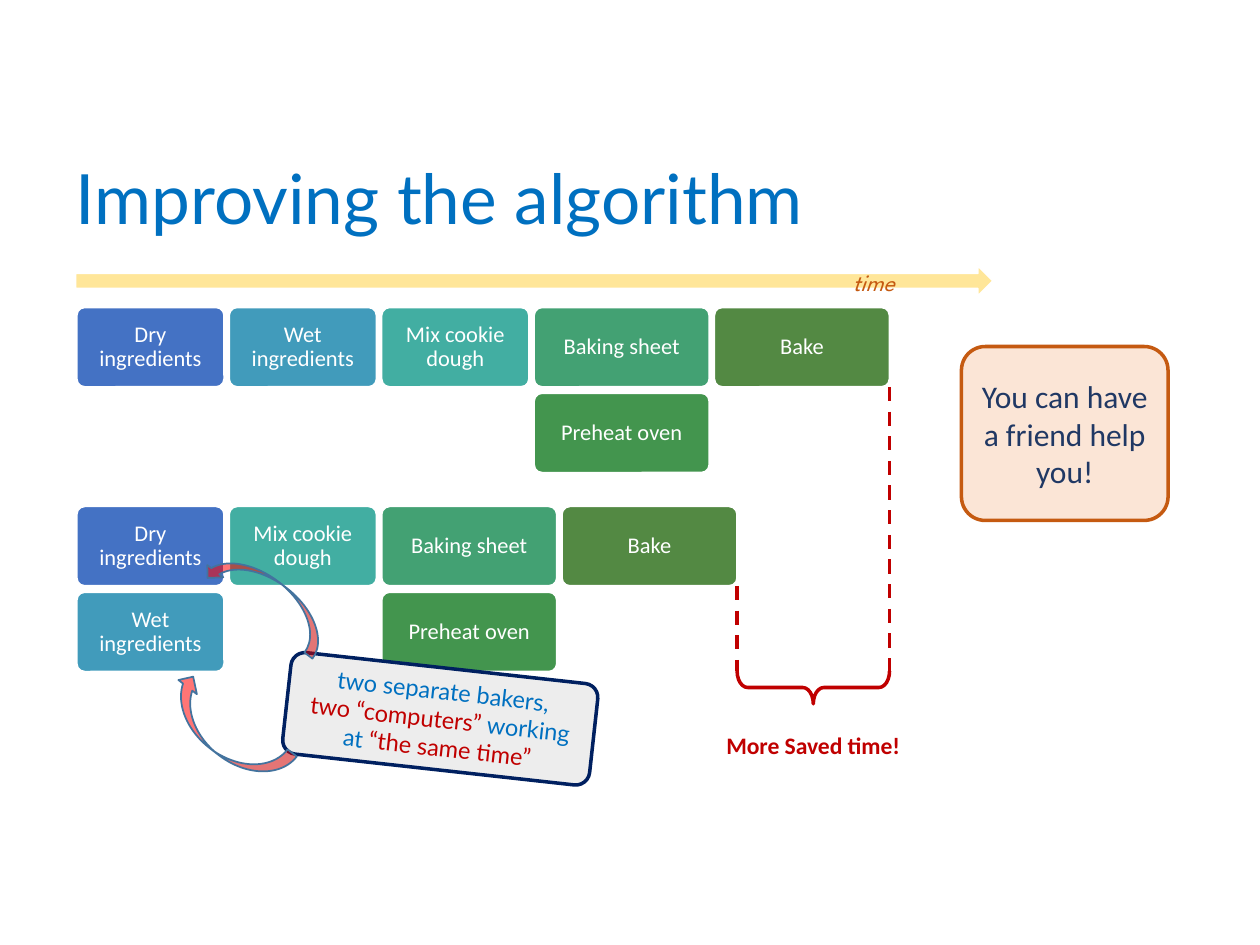
from dataclasses import dataclass

from lxml.etree import SubElement
from pptx import Presentation
from pptx.dml.color import RGBColor
from pptx.enum.dml import MSO_LINE
from pptx.enum.shapes import MSO_CONNECTOR, MSO_SHAPE
from pptx.enum.text import MSO_ANCHOR, MSO_AUTO_SIZE, PP_ALIGN
from pptx.oxml.ns import qn
from pptx.util import Pt


@dataclass(frozen=True)
class Theme:
    body_font: str = "Calibri"
    title_font: str = "Lato"
    time_font: str = "League Spartan"
    title_size: float = 39.6
    note_size: float = 18
    label_size: float = 13.5
    step_size: float = 12.8
    white: str = "FFFFFF"
    blue: str = "0070C0"
    navy: str = "002060"
    ink: str = "203864"
    red: str = "C00000"
    orange: str = "C55A11"
    peach: str = "FBE5D6"
    grey: str = "EDEDED"
    yellow: str = "FFE699"
    swoosh: str = "FF0000"
    swoosh_line: str = "43739E"


THEME = Theme()

TITLE = "Improving the algorithm"
STEP_COLOURS = {
    "Dry ingredients": "4472C4",
    "Wet ingredients": "419BBB",
    "Mix cookie dough": "42AEA2",
    "Baking sheet": "43A173",
    "Preheat oven": "43954E",
    "Bake": "538943",
}
NARROW, WIDE = 84.2, 100.1
# Each column: its width and the steps done in parallel, top to bottom.
ONE_BAKER = [
    (NARROW, ["Dry ingredients"]),
    (NARROW, ["Wet ingredients"]),
    (NARROW, ["Mix cookie dough"]),
    (WIDE, ["Baking sheet", "Preheat oven"]),
    (WIDE, ["Bake"]),
]
TWO_BAKERS = [
    (NARROW, ["Dry ingredients", "Wet ingredients"]),
    (NARROW, ["Mix cookie dough"]),
    (WIDE, ["Baking sheet", "Preheat oven"]),
    (WIDE, ["Bake"]),
]
BAKERS_NOTE = [
    [("two separate bakers,", THEME.blue)],
    [("two “computers” ", THEME.red), ("working at ", THEME.blue),
     ("“the same time”", THEME.red)],
]
# Box, and whether the arrow is mirrored.
SWOOSHES = [((115.9, 377.3, 26.6, 81.4), False), ((141.8, 301.7, 23, 81.4), True)]

FLOW_LEFT, STEP_GAP = 43.9, 2.9
STEP_HEIGHT, STEP_PITCH = 45.4, 49
ONE_TOP, TWO_TOP = 175.7, 289.4
BRACE_TOP, BRACE_DEPTH = 383.5, 18.7


def colour(value):
    return RGBColor.from_string(value)


def write(shape, paragraphs, size, font, align=PP_ALIGN.CENTER, spacing=None,
          bold=None, italic=None):
    """Fill a shape with paragraphs, each a list of (text, colour) runs."""
    frame = shape.text_frame
    frame.word_wrap = True
    for index, spans in enumerate(paragraphs):
        para = frame.add_paragraph() if index else frame.paragraphs[0]
        para.alignment = align
        para.line_spacing = spacing
        for text, ink in spans:
            span = para.add_run()
            span.text = text
            span.font.size = Pt(size)
            span.font.name = font
            span.font.bold = bold
            span.font.italic = italic
            span.font.color.rgb = colour(ink)
    return frame


def add_figure(shapes, kind, box, fill, line, width, adjust=(), turn=0):
    shape = shapes.add_shape(kind, *map(Pt, box))
    shape.shadow.inherit = False
    for index, value in enumerate(adjust):
        shape.adjustments[index] = value
    shape.rotation = turn
    if fill:
        shape.fill.solid()
        shape.fill.fore_color.rgb = colour(fill)
    else:
        shape.fill.background()
    shape.line.color.rgb = colour(line)
    shape.line.width = Pt(width)
    return shape


def add_label(shapes, box, text, ink, font, **style):
    label = shapes.add_textbox(*map(Pt, box))
    frame = write(label, [[(text, ink)]], THEME.label_size, font, **style)
    frame.auto_size = MSO_AUTO_SIZE.SHAPE_TO_FIT_TEXT


def add_flow(shapes, columns, top):
    """Draw the steps and return the right edge, where the work ends."""
    left = FLOW_LEFT
    for width, steps in columns:
        for row, name in enumerate(steps):
            box = (left, top + row * STEP_PITCH, width, STEP_HEIGHT)
            step = add_figure(shapes, MSO_SHAPE.ROUNDED_RECTANGLE, box,
                              STEP_COLOURS[name], THEME.white, 1, [0.1])
            frame = write(step, [[(name, THEME.white)]], THEME.step_size,
                          THEME.body_font, spacing=0.9)
            frame.margin_left = frame.margin_right = Pt(9.4)
            frame.margin_top = frame.margin_bottom = Pt(9.4)
        left += width + STEP_GAP
    return left - STEP_GAP


def add_dashed_drop(shapes, x, top):
    drop = shapes.add_connector(MSO_CONNECTOR.STRAIGHT, Pt(x), Pt(top), Pt(x), Pt(BRACE_TOP))
    drop.line.color.rgb = colour(THEME.red)
    drop.line.width = Pt(2)
    drop.line.dash_style = MSO_LINE.DASH
    SubElement(drop._element.spPr, qn("a:effectLst"))


def add_saved_time(shapes, start, end):
    span = end - start
    middle = (start + end) / 2
    # Box of the brace before its quarter turn.
    box = (middle - BRACE_DEPTH / 2, BRACE_TOP + BRACE_DEPTH / 2 - span / 2,
           BRACE_DEPTH, span)
    add_figure(shapes, MSO_SHAPE.LEFT_BRACE, box, None, THEME.red, 2, [0.323, 0.5], 270)
    add_dashed_drop(shapes, end, ONE_TOP + STEP_HEIGHT)
    add_label(shapes, (middle - 72, 414, 144, 23.8), "More Saved time!",
              THEME.red, THEME.body_font, bold=True)
    add_dashed_drop(shapes, start, TWO_TOP + STEP_HEIGHT)


def add_swoosh(shapes, box, mirrored):
    swoosh = add_figure(shapes, MSO_SHAPE.CURVED_LEFT_ARROW, box, THEME.swoosh,
                        THEME.swoosh_line, 1, turn=127.6)
    tint = swoosh._element.spPr.find(qn("a:solidFill"))[0]
    SubElement(tint, qn("a:alpha"), val="54000")
    if mirrored:
        swoosh._element.spPr.find(qn("a:xfrm")).set("flipH", "1")


def main():
    deck = Presentation()
    deck.slide_width, deck.slide_height = Pt(720), Pt(540)
    page = deck.slides.add_slide(deck.slide_layouts[5])
    shapes = page.shapes

    title = shapes.title
    title.left, title.top, title.width, title.height = map(Pt, (36, 89.3, 634.3, 51.8))
    frame = write(title, [[(TITLE, THEME.blue)]], THEME.title_size, THEME.title_font,
                  PP_ALIGN.LEFT, 0.9)
    frame.vertical_anchor = MSO_ANCHOR.MIDDLE

    one_end = add_flow(shapes, ONE_BAKER, ONE_TOP)
    friend = add_figure(shapes, MSO_SHAPE.ROUNDED_RECTANGLE, (549.4, 198, 118.1, 99.4),
                        THEME.peach, THEME.orange, 2, [0.137])
    write(friend, [[("You can have a friend help you!", THEME.ink)]],
          THEME.note_size, THEME.body_font)

    saving = shapes.add_group_shape()
    two_end = add_flow(shapes, TWO_BAKERS, TWO_TOP)
    add_saved_time(saving.shapes, two_end, one_end)

    bakers = add_figure(shapes, MSO_SHAPE.ROUNDED_RECTANGLE, (163.4, 381.6, 176.4, 58.3),
                        THEME.grey, THEME.navy, 2, [0.137], 6.3)
    write(bakers, BAKERS_NOTE, THEME.label_size, THEME.title_font)
    for box, mirrored in SWOOSHES:
        add_swoosh(shapes, box, mirrored)

    timeline = shapes.add_group_shape().shapes
    add_figure(timeline, MSO_SHAPE.RIGHT_ARROW, (43.2, 151.9, 524.2, 17.3),
               THEME.yellow, THEME.white, 1)
    add_label(timeline, (480.2, 149.8, 50.4, 23.8), "time", THEME.orange,
              THEME.time_font, align=PP_ALIGN.LEFT, italic=True)

    deck.save("out.pptx")


if __name__ == "__main__":
    main()
